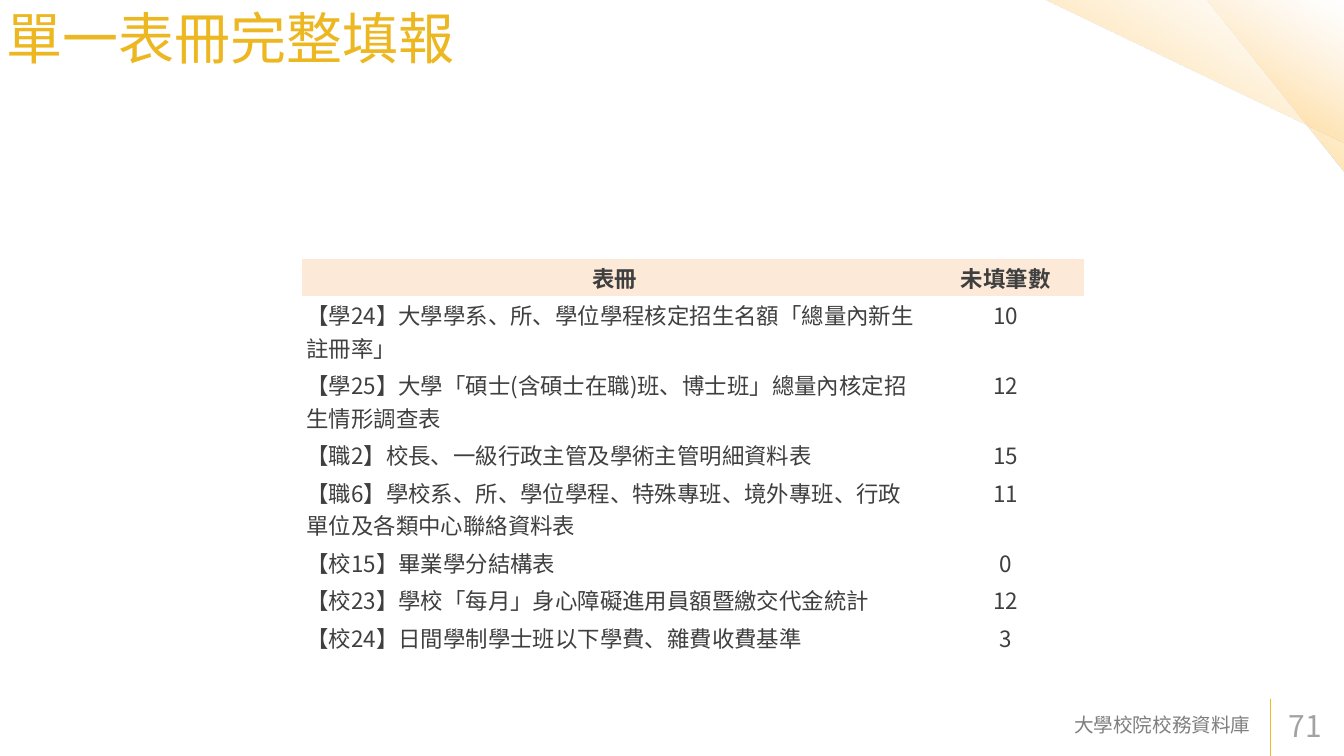
from lxml.etree import SubElement
from pptx import Presentation
from pptx.dml.color import RGBColor
from pptx.enum.shapes import MSO_CONNECTOR as Connector, MSO_SHAPE as Shape
from pptx.enum.text import MSO_ANCHOR as Anchor, PP_ALIGN as Align
from pptx.oxml import parse_xml
from pptx.oxml.ns import nsdecls, qn
from pptx.util import Inches, Pt

FONT = "Noto Sans CJK TC"
COLORS = {"gold": "ECB720", "text": "3F3F3F", "header": "FDE9D8",
          "footer": "7F7F7F", "number": "A2A2A2"}
# Position, colour and opacity in percent
GRADIENT = [(0, "FFD984", 100), (50, "FFD995", 43), (100, "FFF0DA", 0)]
NO_GRID_STYLE = "{2D5ABB26-0587-4C30-8999-92F81FD0307C}"


def write(frame, text, size, color, align=Align.LEFT, bold=False):
    frame.text = text
    para = frame.paragraphs[0]
    para.alignment = align
    font = para.font
    font.size, font.bold, font.name = Pt(size), bold, FONT
    font.color.rgb = RGBColor.from_string(COLORS[color])
    SubElement(font._element, qn("a:ea")).set("typeface", FONT)


deck = Presentation()
deck.slide_width, deck.slide_height = Inches(20), Inches(11.25)
page = deck.slides.add_slide(deck.slide_layouts[5])
shapes = page.shapes

# Rule beside the page number
rule = shapes.add_connector(Connector.STRAIGHT, Inches(18.91), deck.slide_height,
                            Inches(18.91), Inches(10.4))
rule.line.color.rgb = RGBColor.from_string(COLORS["gold"])
rule.line.width = Pt(1)
SubElement(rule._element.spPr, qn("a:effectLst"))

# Corner triangles with a fading fill
stops = "".join(
    f'<a:gs pos="{position * 1000}"><a:srgbClr val="{color}">'
    f'<a:alpha val="{opacity * 1000}"/></a:srgbClr></a:gs>'
    for position, color, opacity in GRADIENT)
for left, width, height in [(17.96, 2.04, 2.57), (15.54, 4.48, 2.13)]:
    triangle = shapes.add_shape(Shape.RIGHT_TRIANGLE, Inches(left), 0,
                                Inches(width), Inches(height))
    triangle.rotation = 180
    triangle.shadow.inherit = False
    triangle.line.fill.background()
    triangle._element.spPr.find(qn("a:prstGeom")).addnext(parse_xml(
        f'<a:gradFill {nsdecls("a")} rotWithShape="1"><a:gsLst>{stops}</a:gsLst>'
        f'<a:lin ang="{120 * 60000}" scaled="0"/></a:gradFill>'))

# Title
title = shapes.title
title.left, title.top, title.width, title.height = 0, 0, Inches(8.76), Inches(3.28)
title.text_frame.vertical_anchor = Anchor.TOP
write(title.text_frame, "單一表冊完整填報", 60, "gold")

# Footer and page number
for left, width, text, size, color, align in [
        (10.29, 8.5, "大學校院校務資料庫", 21, "footer", Align.RIGHT),
        (19, 0.99, "71", 32, "number", Align.LEFT)]:
    box = shapes.add_textbox(Inches(left), Inches(10.49), Inches(width), Inches(0.6))
    frame = box.text_frame
    frame.word_wrap = True
    frame.vertical_anchor = Anchor.MIDDLE
    frame.margin_left = frame.margin_right = Inches(0.18)
    frame.margin_top = frame.margin_bottom = Inches(0.09)
    write(frame, text, size, color, align)

# Table of forms and their missing entries: name, count, lines of text
rows = [
    ("表冊", "未填筆數", 1),
    ("【學24】大學學系、所、學位學程核定招生名額「總量內新生註冊率」", "10", 2),
    ("【學25】大學「碩士(含碩士在職)班、博士班」總量內核定招生情形調查表", "12", 2),
    ("【職2】校長、一級行政主管及學術主管明細資料表", "15", 1),
    ("【職6】學校系、所、學位學程、特殊專班、境外專班、行政單位及各類中心聯絡資料表", "11", 2),
    ("【校15】畢業學分結構表", "0", 1),
    ("【校23】學校「每月」身心障礙進用員額暨繳交代金統計", "12", 1),
    ("【校24】日間學制學士班以下學費、雜費收費基準", "3", 1),
]
table_width = 11.64
table = shapes.add_table(len(rows), 2, Inches(4.49), Inches(3.85),
                         Inches(table_width), Inches(5.92)).table
table.horz_banding = False
table._tbl.tblPr.find(qn("a:tableStyleId")).text = NO_GRID_STYLE
for column, share in zip(table.columns, (0.8, 0.2)):
    column.width = Inches(table_width * share)
for row_index, (name, count, lines) in enumerate(rows):
    header = row_index == 0
    table.rows[row_index].height = Inches(0.08 + 0.48 * lines)
    for column_index, text in enumerate((name, count)):
        cell = table.cell(row_index, column_index)
        cell.margin_left = cell.margin_right = Inches(0.07)
        cell.margin_top = cell.margin_bottom = Inches(0.04)
        if header:
            cell.fill.solid()
            cell.fill.fore_color.rgb = RGBColor.from_string(COLORS["header"])
        else:
            cell.fill.background()
        centred = header or column_index == 1
        write(cell.text_frame, text, 24, "text",
              Align.CENTER if centred else Align.LEFT, header)

deck.save("out.pptx")
